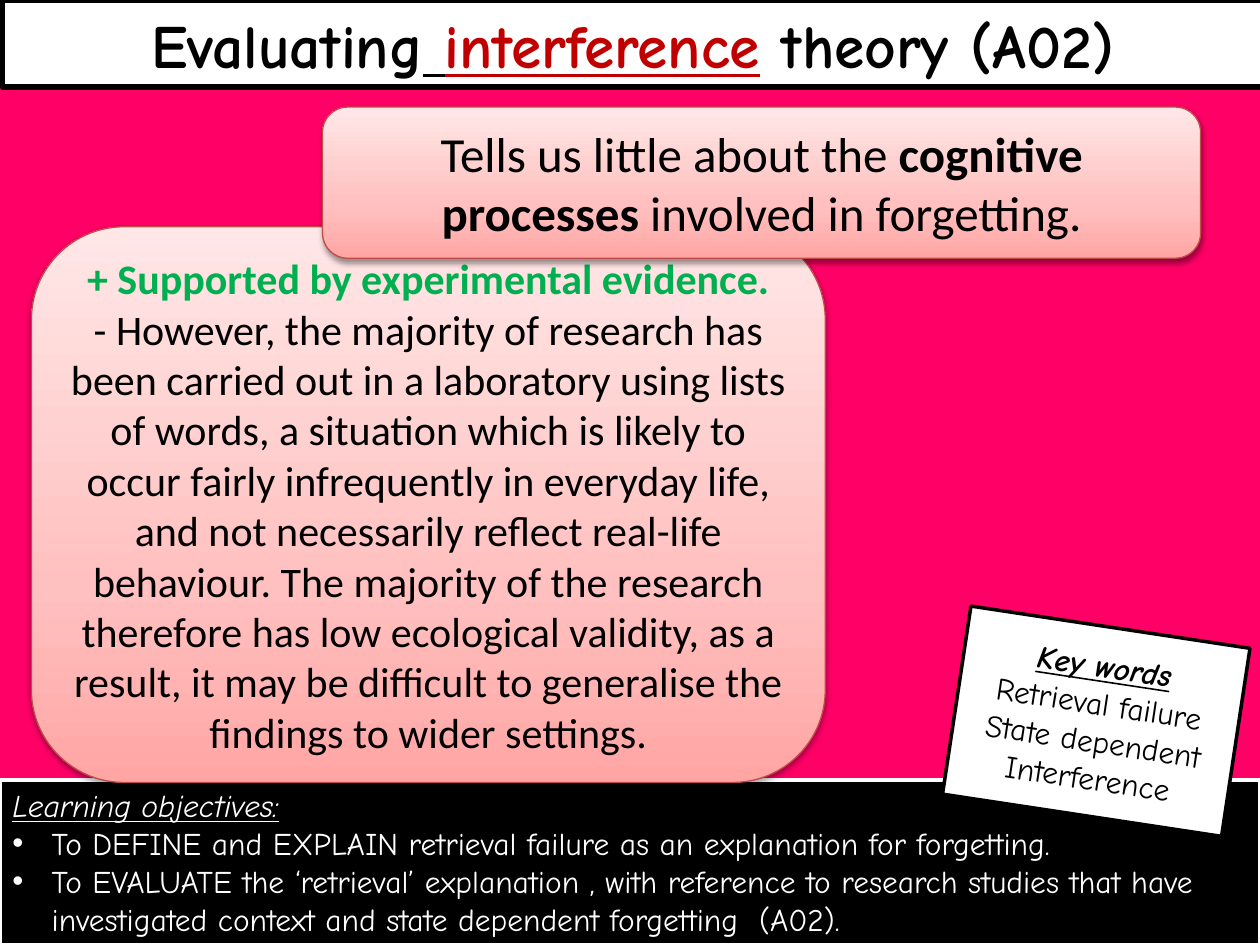
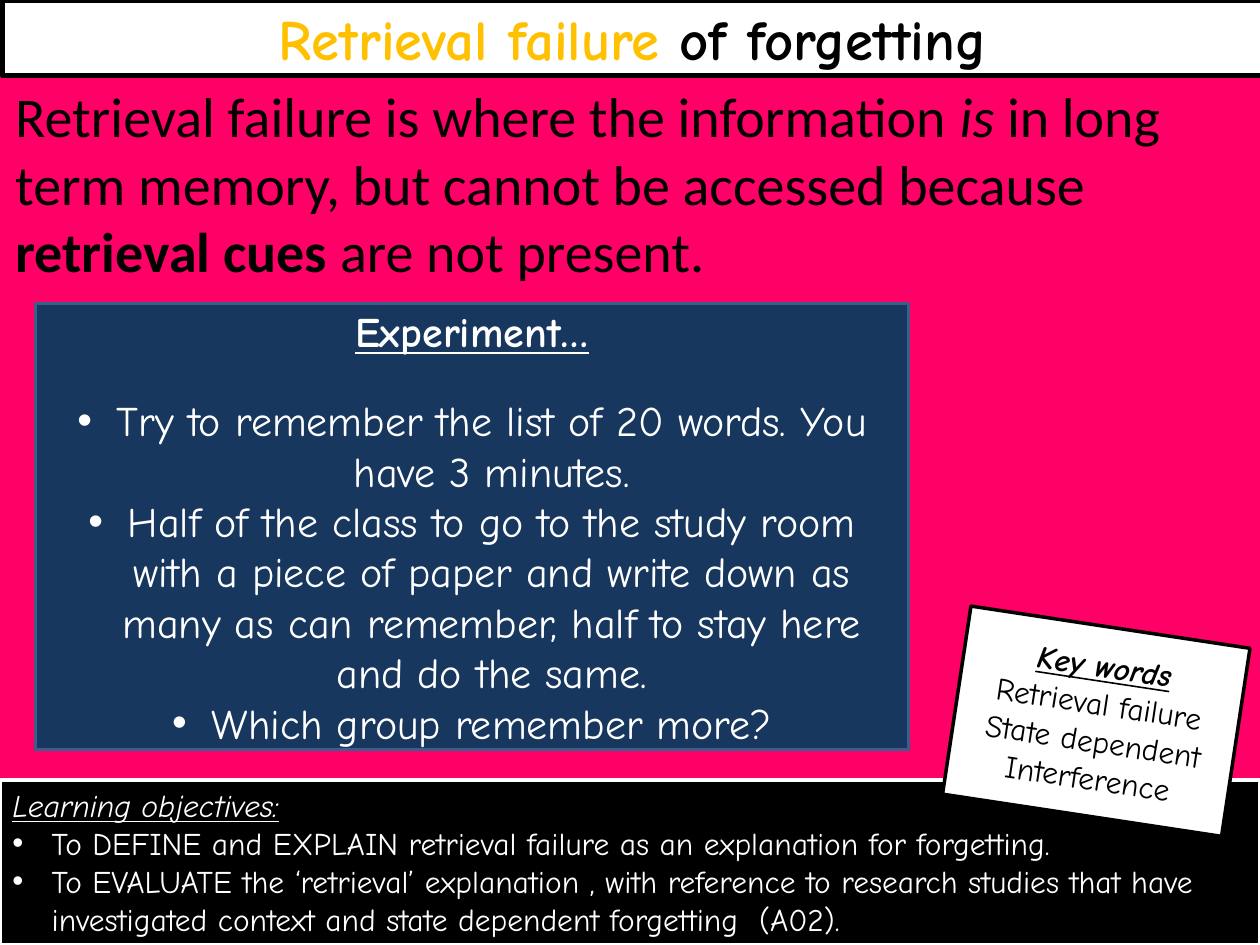
from copy import deepcopy

from lxml.etree import SubElement
from pptx import Presentation
from pptx.dml.color import RGBColor
from pptx.enum.shapes import MSO_SHAPE
from pptx.enum.text import MSO_ANCHOR, MSO_AUTO_SIZE, PP_ALIGN
from pptx.oxml.ns import qn
from pptx.util import Pt

PINK = RGBColor(0xFF, 0x00, 0x66)
BLACK = RGBColor(0x00, 0x00, 0x00)
WHITE = RGBColor(0xFF, 0xFF, 0xFF)
RED = RGBColor(0xC0, 0x00, 0x00)
AMBER = RGBColor(0xFF, 0xC0, 0x00)
GREEN = RGBColor(0x00, 0xB0, 0x50)
NAVY = RGBColor(0x17, 0x37, 0x5E)
STEEL = RGBColor(0x3A, 0x5F, 0x8C)
BRICK = RGBColor(0xBF, 0x4C, 0x48)
BLUSH_STOPS = [
    (0, RGBColor(0xFF, 0xA6, 0xA5)),
    (0.35, RGBColor(0xFF, 0xC0, 0xBF)),
    (1, RGBColor(0xFF, 0xE7, 0xE7)),
]

HAND, PLAIN = "Comic Neue", "Calibri"
PAGE_WIDTH, PAGE_HEIGHT = 720, 540
BULLET_INDENT = 22.5
TITLE_ONLY, TITLE_AND_BODY = 5, 1

# A paragraph is a list of spans: (text, style letters b/i/u, optional colour).
OBJECTIVES_HEADING = [("Learning objectives:", "iu")]
OBJECTIVES = [
    [("To DEFINE and EXPLAIN retrieval failure as an explanation for forgetting.", "")],
    [("To EVALUATE the ‘retrieval’ explanation , with reference to research studies "
      "that have investigated context and state dependent forgetting  (A02).", "")],
]
KEY_WORDS = [
    [("Key words", "biu")],
    [("Retrieval failure", "")],
    [("State dependent", "")],
    [("Interference", "")],
]

EVALUATION_TITLE = [
    ("Evaluating", "b"), (" ", "bu"), ("interference", "bu", RED), (" theory (A02)", "b"),
]
EVIDENCE = [
    [("+ Supported by experimental evidence.", "b", GREEN)],
    [("- However, the majority of research has been carried out in a laboratory using "
      "lists of words, a situation which is likely to occur fairly infrequently in "
      "everyday life, and not necessarily reflect real-life behaviour. The majority of "
      "the research therefore has low ecological validity, as a result, it may be "
      "difficult to generalise the findings to wider settings.", "")],
]
LIMITATION = [
    [("Tells us little about the ", ""), ("cognitive processes ", "b"),
     ("involved in forgetting.", "")],
]

RETRIEVAL_TITLE = [("Retrieval failure ", "b", AMBER), ("of forgetting", "b")]
DEFINITION = [
    [("Retrieval failure is where the information ", ""), ("is", "i"),
     (" in long term memory, but cannot be accessed because ", ""),
     ("retrieval cues ", "b"), ("are not present.", "")],
]
EXPERIMENT_HEADING = [("Experiment…", "bu")]
EXPERIMENT_STEPS = [
    [("Try to remember the list of 20 words. You have 3 minutes.", "")],
    [("Half of the class to go to the study room with a piece of paper and write down "
      "as many as can remember, half to stay here and do the same.", "")],
    [("Which group remember more?", "")],
]


def place(shape, left, top, width, height):
    shape.left, shape.top = Pt(left), Pt(top)
    shape.width, shape.height = Pt(width), Pt(height)


def paint(shape, fill, line, line_width):
    shape.fill.solid()
    shape.fill.fore_color.rgb = fill
    shape.line.color.rgb = line
    shape.line.width = Pt(line_width)


def set_bullet(para, bulleted):
    properties = para._p.get_or_add_pPr()
    indent = Pt(BULLET_INDENT) if bulleted else 0
    properties.set("marL", str(indent))
    properties.set("indent", str(-indent))
    if bulleted:
        SubElement(properties, qn("a:buFont"), typeface="Arial")
        SubElement(properties, qn("a:buChar"), char="•")
    else:
        SubElement(properties, qn("a:buNone"))


def write(shape, paragraphs, font, size, color=BLACK, align=PP_ALIGN.CENTER,
          anchor=MSO_ANCHOR.MIDDLE, bullets_from=None):
    """Fill a shape with paragraphs; those from index bullets_from on get bullets."""
    frame = shape.text_frame
    frame.word_wrap = True
    frame.auto_size = MSO_AUTO_SIZE.NONE
    frame.vertical_anchor = anchor
    for index, spans in enumerate(paragraphs):
        para = frame.paragraphs[0] if index == 0 else frame.add_paragraph()
        para.alignment = align
        set_bullet(para, bullets_from is not None and index >= bullets_from)
        for text, style, *span_color in spans:
            span = para.add_run()
            span.text = text
            span.font.name = font
            span.font.size = Pt(size)
            span.font.bold = "b" in style
            span.font.italic = "i" in style
            span.font.underline = "u" in style
            span.font.color.rgb = span_color[0] if span_color else color


def add_box(page, kind, bounds):
    box = page.shapes.add_shape(kind, *(Pt(length) for length in bounds))
    box.shadow.inherit = False
    return box


def add_blush_card(page, bounds, paragraphs, size):
    """Add a rounded card with a pink gradient and a soft shadow below it."""
    card = add_box(page, MSO_SHAPE.ROUNDED_RECTANGLE, bounds)
    paint(card, WHITE, BRICK, 0.75)
    card.fill.gradient()
    card.fill.gradient_angle = 90
    properties = card._element.spPr
    stop_list = properties.find(".//" + qn("a:gsLst"))
    stop_list.append(deepcopy(stop_list[0]))
    for stop, (position, color) in zip(card.fill.gradient_stops, BLUSH_STOPS):
        stop.position = position
        stop.color.rgb = color
    shadow = SubElement(properties.find(qn("a:effectLst")), qn("a:outerShdw"),
                        blurRad=str(Pt(3.1)), dist=str(Pt(1.6)), dir="5400000",
                        rotWithShape="0")
    shade = SubElement(shadow, qn("a:srgbClr"), val=str(BLACK))
    SubElement(shade, qn("a:alpha"), val="38000")
    write(card, paragraphs, PLAIN, size)


def start_page(deck, layout, title_spans, title_size, title_height):
    """Add a page with its background, title band, objectives and key words."""
    page = deck.slides.add_slide(deck.slide_layouts[layout])
    page.background.fill.solid()
    page.background.fill.fore_color.rgb = PINK

    title = page.shapes.title
    place(title, 1.5, 0, PAGE_WIDTH, title_height)
    paint(title, WHITE, BLACK, 3)
    write(title, [title_spans], HAND, title_size)

    objectives_top = 445.7
    objectives = add_box(page, MSO_SHAPE.RECTANGLE,
                         (0, objectives_top, PAGE_WIDTH, PAGE_HEIGHT - objectives_top))
    paint(objectives, BLACK, WHITE, 2)
    write(objectives, [OBJECTIVES_HEADING] + OBJECTIVES, HAND, 18, WHITE,
          PP_ALIGN.LEFT, MSO_ANCHOR.TOP, bullets_from=1)

    key_words = add_box(page, MSO_SHAPE.RECTANGLE, (545.8, 357.8, 161.3, 108.7))
    key_words.rotation = 8.6
    paint(key_words, WHITE, BLACK, 2)
    write(key_words, KEY_WORDS, HAND, 18)
    return page


def build_evaluation_page(deck):
    page = start_page(deck, TITLE_ONLY, EVALUATION_TITLE, 35.1, 49.7)
    add_blush_card(page, (18, 129.6, 453.6, 317.5), EVIDENCE, 24)
    add_blush_card(page, (184.3, 61.2, 501.8, 86.4), LIMITATION, 28)


def build_retrieval_page(deck):
    title_height = 43.2
    page = start_page(deck, TITLE_AND_BODY, RETRIEVAL_TITLE, 32.4, title_height)
    body = page.placeholders[1]
    place(body, 1.5, title_height, PAGE_WIDTH - 1.5, 356.4)
    write(body, DEFINITION, PLAIN, 32, align=PP_ALIGN.LEFT, anchor=MSO_ANCHOR.TOP)

    experiment = add_box(page, MSO_SHAPE.RECTANGLE, (20.2, 173.5, 499, 254.9))
    paint(experiment, NAVY, STEEL, 2)
    write(experiment, [EXPERIMENT_HEADING] + EXPERIMENT_STEPS, HAND, 24, WHITE,
          bullets_from=1)
    experiment.text_frame.paragraphs[0].space_after = Pt(22)


def main():
    deck = Presentation()
    deck.slide_width, deck.slide_height = Pt(PAGE_WIDTH), Pt(PAGE_HEIGHT)
    build_evaluation_page(deck)
    build_retrieval_page(deck)
    deck.save("out.pptx")


if __name__ == "__main__":
    main()
